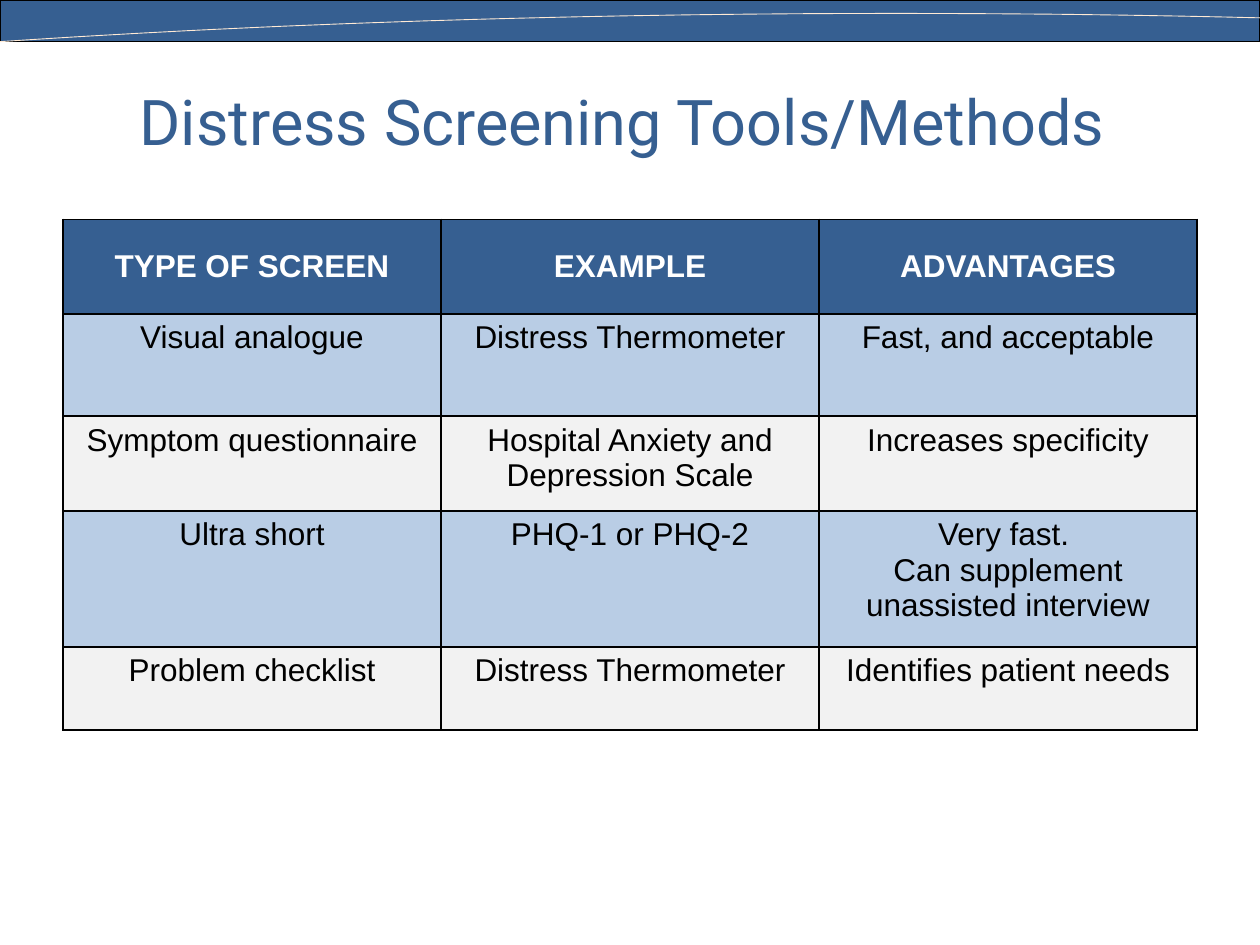
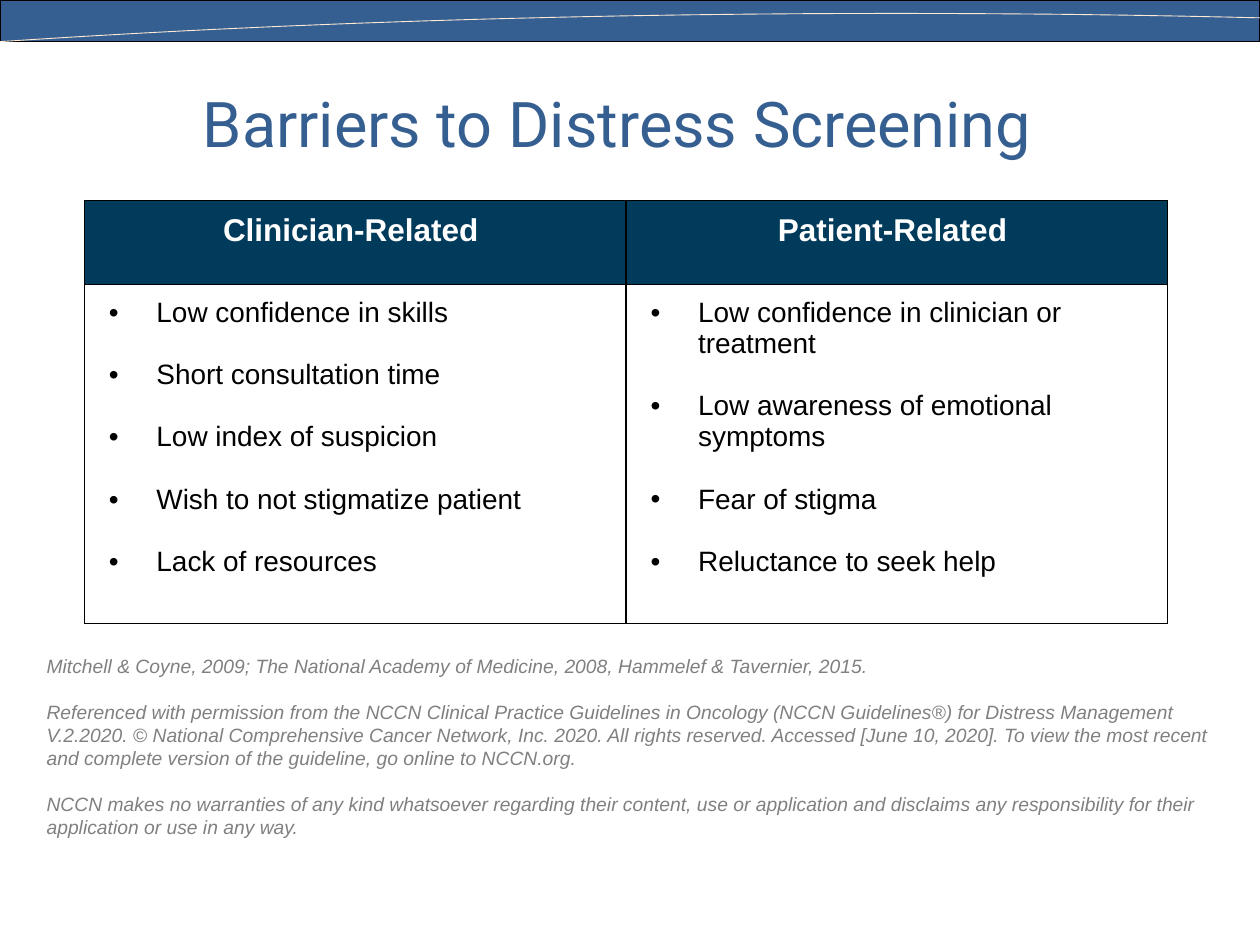
from lxml import etree
from pptx import Presentation
from pptx.dml.color import RGBColor
from pptx.enum.shapes import MSO_SHAPE
from pptx.enum.text import MSO_ANCHOR, PP_ALIGN
from pptx.oxml import parse_xml
from pptx.oxml.ns import nsdecls, qn
from pptx.util import Cm, Pt

BLUE = RGBColor(0x36, 0x5F, 0x91)
NAVY = RGBColor(0x00, 0x3B, 0x5C)
PALE_BLUE = RGBColor(0xB9, 0xCD, 0xE5)
PALE_GREY = RGBColor(0xF2, 0xF2, 0xF2)
GREY = RGBColor(0x80, 0x80, 0x80)
CREAM = RGBColor(0xFF, 0xEA, 0xD5)
WHITE = RGBColor(0xFF, 0xFF, 0xFF)
BLACK = RGBColor(0, 0, 0)

PAGE_W = 25.4
BAND_H = 0.84
# Control points of the curve across the band, right to left
CURVE = [(PAGE_W, 0.36), (18.9, 0.2), (9.63, 0.2), (0, BAND_H)]
CURVE_STEPS = 60


def write(tf, lines, size, color, font="Arial", align=PP_ALIGN.CENTER,
          bold=False, italic=False, gap=0, bullets=False):
    """Fill a text frame with one paragraph per line, gap points apart."""
    tf.word_wrap = True
    for i, line in enumerate(lines):
        p = tf.paragraphs[0] if i == 0 else tf.add_paragraph()
        p.alignment = align
        if bullets:
            pPr = p._p.get_or_add_pPr()
            pPr.set("marL", str(Cm(1.2)))
            pPr.set("indent", str(Cm(-0.96)))
            etree.SubElement(pPr, qn("a:buFont")).set("typeface", "Arial")
            etree.SubElement(pPr, qn("a:buChar")).set("char", "•")
        p.space_before = Pt(0)
        p.space_after = Pt(gap if i < len(lines) - 1 else 0)
        r = p.add_run()
        r.text = line
        r.font.name = font
        r.font.size = Pt(size)
        r.font.bold = bold
        r.font.italic = italic
        r.font.color.rgb = color


def add_grid(s, left, top, col_w, cols, heights, border):
    """Add a table with equal columns and black cell borders."""
    table = s.shapes.add_table(len(heights), cols, Cm(left), Cm(top),
                               Cm(col_w * cols), Cm(sum(heights))).table
    for col in table.columns:
        col.width = Cm(col_w)
    for row, height in zip(table.rows, heights):
        row.height = Cm(height)
    for cell in table.iter_cells():
        tcPr = cell._tc.get_or_add_tcPr()
        for side in ("lnL", "lnR", "lnT", "lnB"):
            tcPr.append(parse_xml(
                f'<a:{side} {nsdecls("a")} w="{Pt(border)}"><a:solidFill>'
                f'<a:srgbClr val="{BLACK}"/></a:solidFill></a:{side}>'))
    return table


prs = Presentation()
prs.slide_width, prs.slide_height = Cm(PAGE_W), Cm(19.05)

# Band, curve and title on every slide
titles = [("Distress Screening Tools/Methods ", 1.27, 0.84),
          ("Barriers to Distress Screening ", 1.17, 0.87)]
curve_points = []
for step in range(CURVE_STEPS + 1):
    t = step / CURVE_STEPS
    weights = ((1 - t) ** 3, 3 * t * (1 - t) ** 2, 3 * t ** 2 * (1 - t), t ** 3)
    curve_points.append(tuple(
        Cm(sum(w * point[axis] for w, point in zip(weights, CURVE)))
        for axis in (0, 1)))

for title, left, top in titles:
    s = prs.slides.add_slide(prs.slide_layouts[6])
    band = s.shapes.add_shape(MSO_SHAPE.RECTANGLE, 0, 0, Cm(PAGE_W), Cm(BAND_H))
    band.fill.solid()
    band.fill.fore_color.rgb = BLUE
    band.line.color.rgb = BLACK
    band.line.width = Pt(0.75)
    band.shadow.inherit = False

    builder = s.shapes.build_freeform(*curve_points[0])
    builder.add_line_segments(curve_points[1:], close=False)
    curve = builder.convert_to_shape()
    curve.fill.background()
    curve.line.color.rgb = CREAM
    curve.line.width = Pt(0.5)
    curve.shadow.inherit = False

    tf = s.shapes.add_textbox(Cm(left), Cm(top), Cm(22.86), Cm(3.18)).text_frame
    tf.vertical_anchor = MSO_ANCHOR.MIDDLE
    write(tf, [title], 36, BLUE, font="Roboto")

tools_slide, barriers_slide = prs.slides

# Screening tools
tools = [
    ("TYPE OF SCREEN", "EXAMPLE", "ADVANTAGES"),
    ("Visual analogue", "Distress Thermometer", "Fast, and acceptable"),
    ("Symptom questionnaire", "Hospital Anxiety and Depression Scale",
     "Increases specificity"),
    ("Ultra short", "PHQ-1 or PHQ-2",
     "Very fast. \nCan supplement unassisted interview"),
    ("Problem checklist", "Distress Thermometer", "Identifies patient needs"),
]
table = add_grid(tools_slide, 1.27, 4.42, 7.62, 3,
                 [1.91, 2.06, 1.91, 2.74, 1.68], border=1)
for i, row in enumerate(tools):
    header = i == 0
    for j, text in enumerate(row):
        cell = table.cell(i, j)
        cell.fill.solid()
        cell.fill.fore_color.rgb = (
            BLUE if header else PALE_BLUE if i % 2 else PALE_GREY)
        cell.vertical_anchor = MSO_ANCHOR.MIDDLE if header else MSO_ANCHOR.TOP
        write(cell.text_frame, text.split("\n"), 18,
              WHITE if header else BLACK, bold=header)

# Reference notes
notes = [
    "Mitchell & Coyne, 2009; The National Academy of Medicine, 2008, "
    "Hammelef & Tavernier, 2015.",
    "Referenced with permission from the NCCN Clinical Practice Guidelines in "
    "Oncology (NCCN Guidelines®) for Distress Management V.2.2020. © National "
    "Comprehensive Cancer Network, Inc. 2020. All rights reserved. Accessed "
    "[June 10, 2020]. To view the most recent and complete version of the "
    "guideline, go online to NCCN.org.",
    "NCCN makes no warranties of any kind whatsoever regarding their content, "
    "use or application and disclaims any responsibility for their application "
    "or use in any way.",
]
tf = barriers_slide.shapes.add_textbox(
    Cm(0.69), Cm(13.06), Cm(24.18), Cm(3.99)).text_frame
write(tf, notes, 11, GREY, align=PP_ALIGN.LEFT, italic=True, gap=13)

# Barriers
barriers = {
    "Clinician-Related ": [
        "Low confidence in skills", "Short consultation time",
        "Low index of suspicion", "Wish to not stigmatize patient",
        "Lack of resources"],
    "Patient-Related ": [
        "Low confidence in clinician or treatment",
        "Low awareness of emotional symptoms", "Fear of stigma",
        "Reluctance to seek help"],
}
table = add_grid(barriers_slide, 1.7, 4.04, 10.92, 2, [1.7, 6.83], border=0.75)
for cell in table.iter_cells():
    cell.margin_top = cell.margin_bottom = Cm(0.25)
for j, (heading, items) in enumerate(barriers.items()):
    head, body = table.cell(0, j), table.cell(1, j)
    head.fill.solid()
    head.fill.fore_color.rgb = NAVY
    write(head.text_frame, [heading], 18, WHITE, bold=True)
    body.fill.background()
    write(body.text_frame, items, 16, BLACK, align=PP_ALIGN.LEFT, gap=17.8,
          bullets=True)

prs.save("out.pptx")
